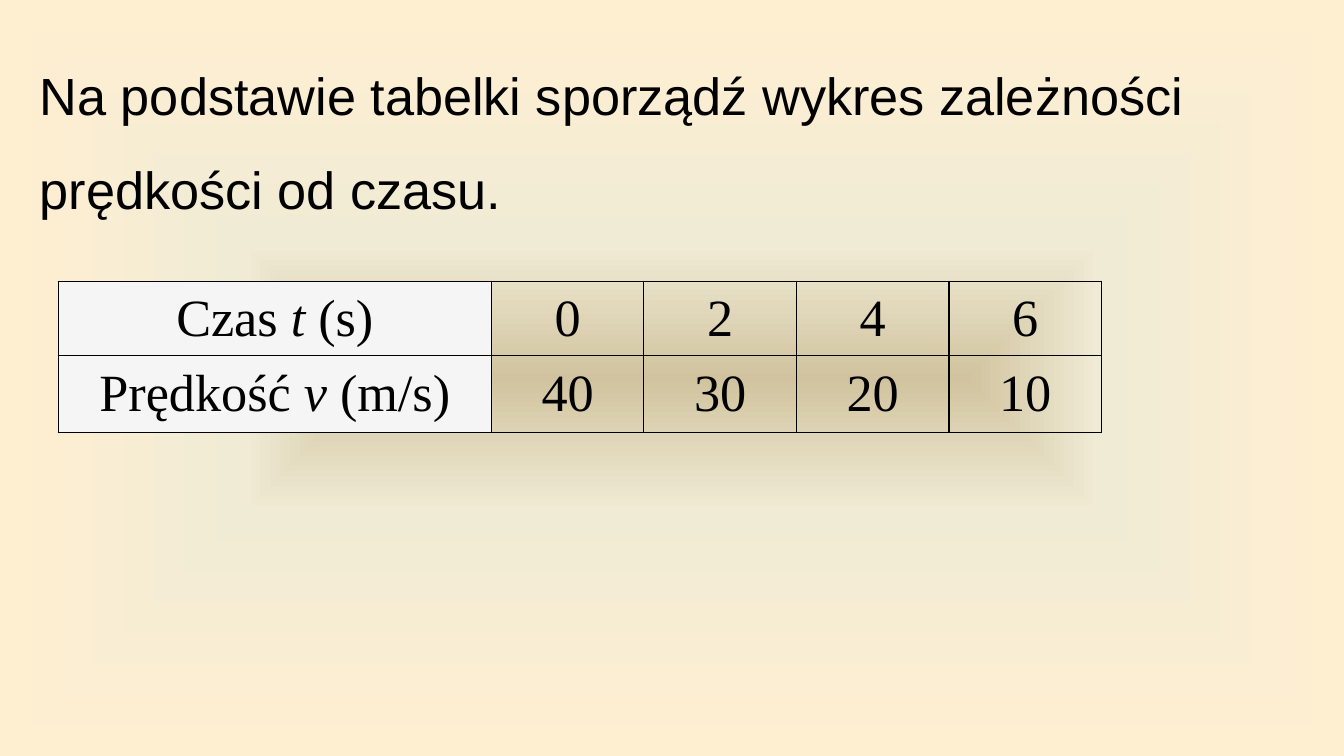
import lxml.etree
import pptx
import pptx.dml.color
import pptx.enum.text
import pptx.oxml.ns
import pptx.util

Pt = pptx.util.Pt
qn = pptx.oxml.ns.qn
MIDDLE = pptx.enum.text.MSO_ANCHOR.MIDDLE
CENTER = pptx.enum.text.PP_ALIGN.CENTER


class Theme:
    ink = "000000"
    label_fill = "F5F5F5"
    gradient = ((0, "D1C39F"), (35, "F0EBD5"), (100, "FFEFD1"))
    task_font = "Arial"
    table_font = "Times New Roman"
    text_size = 28
    border_width = 0.75


def set_values(target, values):
    for name, value in values.items():
        setattr(target, name, value)


def add_element(parent, tag, **attributes):
    return lxml.etree.SubElement(parent, qn(tag), attributes)


class SlideBuilder:
    def __init__(self, slide, theme):
        self.slide = slide
        self.theme = theme

    def background(self):
        """Fill the slide with a gradient that spreads from its centre."""
        self.slide.background.fill.gradient()
        gradient = self.slide.element.xpath(".//a:gradFill")[0]
        for child in list(gradient):
            gradient.remove(child)
        stops = add_element(gradient, "a:gsLst")
        for position, color in self.theme.gradient:
            stop = add_element(stops, "a:gs", pos=str(position * 1000))
            add_element(stop, "a:srgbClr", val=color)
        spread = add_element(gradient, "a:path", path="shape")
        add_element(spread, "a:fillToRect", l="50000", t="50000", r="50000", b="50000")

    def run(self, paragraph, text, font_name, italic=False):
        run = paragraph.add_run()
        run.text = text
        set_values(run.font, {"name": font_name, "size": Pt(self.theme.text_size), "italic": italic})
        run.font.color.rgb = pptx.dml.color.RGBColor.from_string(self.theme.ink)

    def text(self, left, top, width, height, text):
        box = self.slide.shapes.add_textbox(Pt(left), Pt(top), Pt(width), Pt(height))
        set_values(box.text_frame, {"word_wrap": True, "vertical_anchor": MIDDLE})
        paragraph = box.text_frame.paragraphs[0]
        paragraph.line_spacing = 1.5
        self.run(paragraph, text, self.theme.task_font)

    def borders(self, cell):
        properties = cell._tc.get_or_add_tcPr()
        width = str(int(Pt(self.theme.border_width)))
        for index, side in enumerate("LRTB"):
            line = add_element(properties, f"a:ln{side}", w=width)
            add_element(add_element(line, "a:solidFill"), "a:srgbClr", val=self.theme.ink)
            properties.insert(index, line)

    def cell(self, cell, runs, fill=None):
        if fill:
            cell.fill.solid()
            cell.fill.fore_color.rgb = pptx.dml.color.RGBColor.from_string(fill)
        else:
            cell.fill.background()
        set_values(cell, {"vertical_anchor": MIDDLE, "margin_left": Pt(7.2), "margin_right": Pt(7.2),
                          "margin_top": Pt(3.2), "margin_bottom": Pt(3.2)})
        paragraph = cell.text_frame.paragraphs[0]
        paragraph.alignment = CENTER
        for text, italic in runs:
            self.run(paragraph, text, self.theme.table_font, italic)
        self.borders(cell)

    def table(self, left, top, column_widths, row_heights, rows):
        """Each row is a list of label runs followed by its values."""
        table = self.slide.shapes.add_table(
            len(row_heights), len(column_widths), Pt(left), Pt(top),
            Pt(sum(column_widths)), Pt(sum(row_heights))).table
        set_values(table, {"first_row": False, "horz_banding": False})
        for column, width in zip(table.columns, column_widths):
            column.width = Pt(width)
        for row, height, (label, values) in zip(table.rows, row_heights, rows):
            row.height = Pt(height)
            label_cell, *value_cells = row.cells
            self.cell(label_cell, label, self.theme.label_fill)
            for value_cell, value in zip(value_cells, values):
                self.cell(value_cell, [(str(value), False)])


def main():
    presentation = pptx.Presentation()
    set_values(presentation, {"slide_width": Pt(720), "slide_height": Pt(405)})
    slide = presentation.slides.add_slide(presentation.slide_layouts[6])
    builder = SlideBuilder(slide, Theme())
    builder.background()
    builder.text(14.2, 15.8, 680.4, 103,
                 "Na podstawie tabelki sporządź wykres zależności prędkości od czasu.")
    builder.table(31.2, 150.6, [232] + [81.75] * 4, [39, 41], [
        ([("Czas ", False), ("t", True), (" (s)", False)], [0, 2, 4, 6]),
        ([("Prędkość ", False), ("v ", True), ("(m/s)", False)], [40, 30, 20, 10]),
    ])
    presentation.save("out.pptx")


if __name__ == "__main__":
    main()
